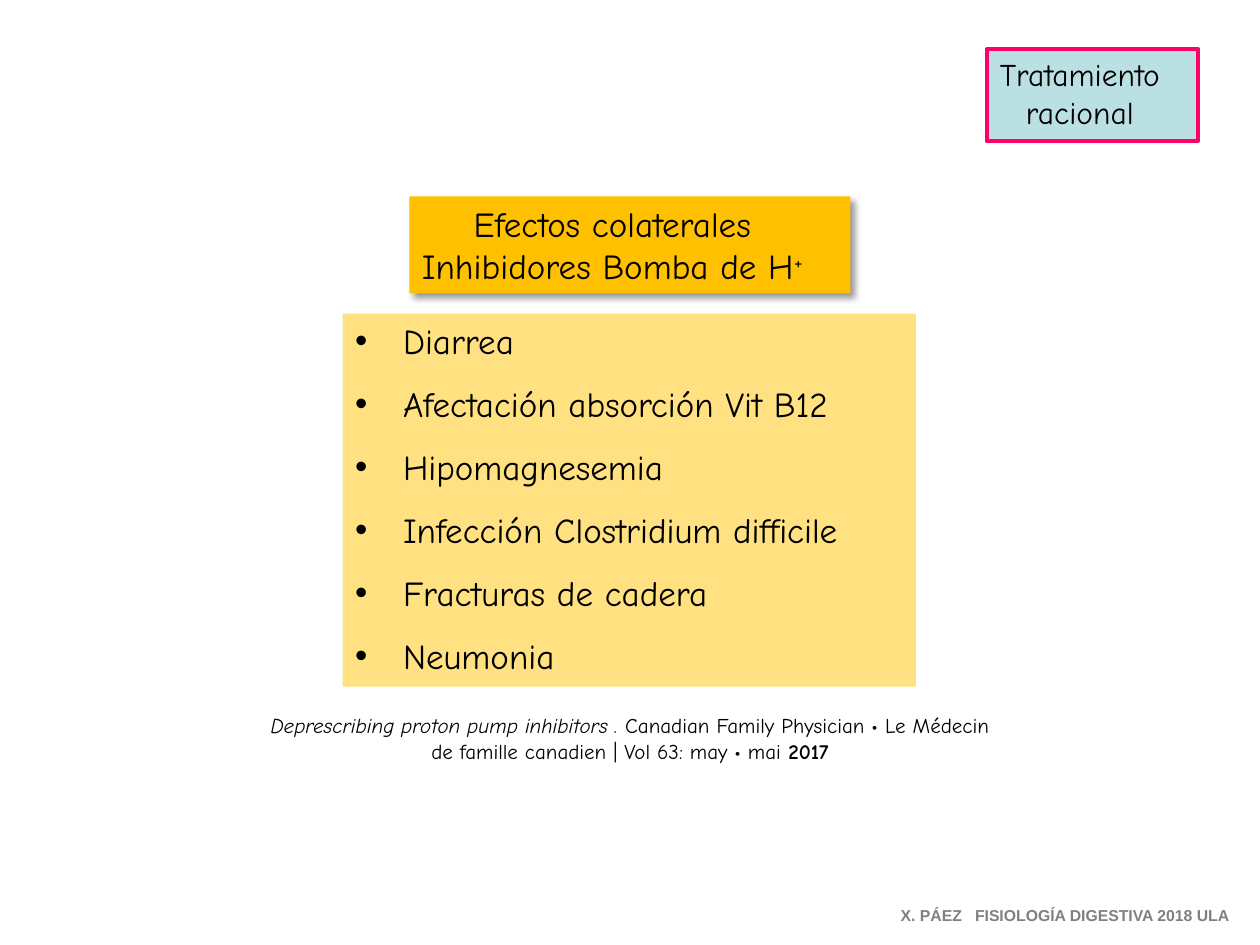
"""Build the slide on side effects of proton pump inhibitors."""
from lxml.etree import SubElement
from pptx import Presentation
from pptx.dml.color import RGBColor
from pptx.enum.shapes import MSO_SHAPE
from pptx.enum.text import MSO_ANCHOR, PP_ALIGN
from pptx.oxml.ns import qn
from pptx.util import Inches, Pt

BLACK = RGBColor(0x00, 0x00, 0x00)
GRAY = RGBColor(0x80, 0x80, 0x80)
AMBER = RGBColor(0xFF, 0xC0, 0x00)
PALE_AMBER = RGBColor(0xFF, 0xE1, 0x81)
PALE_TEAL = RGBColor(0xBB, 0xE0, 0xE3)
PINK = RGBColor(0xFF, 0x00, 0x66)


def add_panel(left, top, width, height, fill):
    panel = slide.shapes.add_shape(
        MSO_SHAPE.RECTANGLE, Inches(left), Inches(top), Inches(width), Inches(height))
    panel.shadow.inherit = False
    panel.fill.solid()
    panel.fill.fore_color.rgb = fill
    panel.line.fill.background()
    panel.text_frame.word_wrap = True
    panel.text_frame.vertical_anchor = MSO_ANCHOR.TOP
    return panel


def add_run(paragraph, text, size, font="Comic Neue", color=BLACK, bold=False, italic=False):
    run = paragraph.add_run()
    run.text = text
    run.font.size = Pt(size)
    run.font.name = font
    run.font.color.rgb = color
    run.font.bold = bold
    run.font.italic = italic
    return run


prs = Presentation()
prs.slide_width = Inches(10)
prs.slide_height = Inches(7.5)
slide = prs.slides.add_slide(prs.slide_layouts[6])

citation = slide.shapes.add_textbox(Inches(2.02), Inches(5.61), Inches(5.96), Inches(0.5))
citation.text_frame.word_wrap = True
reference = citation.text_frame.paragraphs[0]
reference.alignment = PP_ALIGN.CENTER
add_run(reference, "Deprescribing proton pump inhibitors . ", 12, italic=True)
add_run(reference, "Canadian Family Physician • Le Médecin de famille canadien "
                   "| Vol 63: may • mai ", 12)
add_run(reference, "2017", 12, bold=True)

heading = add_panel(3.25, 1.56, 3.5, 0.77, AMBER)
effects = heading._element.spPr.find(qn("a:effectLst"))
shadow = SubElement(effects, qn("a:outerShdw"), blurRad=str(Pt(4)), dist=str(Pt(3)),
                    dir="2700000", algn="tl", rotWithShape="0")
shadow_color = SubElement(shadow, qn("a:srgbClr"), val=str(BLACK))
SubElement(shadow_color, qn("a:alpha"), val="40000")

side_effects = add_panel(2.72, 2.49, 4.55, 2.96, PALE_AMBER)
items = ["Diarrea", "Afectación absorción Vit B12", "Hipomagnesemia",
         "Infección Clostridium difficile", "Fracturas de cadera", "Neumonia"]
for index, item in enumerate(items):
    frame = side_effects.text_frame
    entry = frame.add_paragraph() if index else frame.paragraphs[0]
    entry.alignment = PP_ALIGN.LEFT
    properties = entry._p.get_or_add_pPr()
    properties.set("marL", str(Inches(0.38)))
    properties.set("indent", str(-Inches(0.38)))
    SubElement(properties, qn("a:buFont"), typeface="Arial")
    SubElement(properties, qn("a:buChar"), char="•")
    if index:
        entry.space_before = Pt(12)
    add_run(entry, item, 20)

topic = add_panel(7.83, 0.39, 1.68, 0.73, PALE_TEAL)
topic.line.color.rgb = PINK
topic.line.width = Pt(2.25)

for panel, lines, size, right_inset in [
    (heading, ["Efectos colaterales", "Inhibidores Bomba de H"], 20, 0.28),
    (topic, ["Tratamiento", "racional"], 18, 0.2),
]:
    frame = panel.text_frame
    frame.margin_left = 0
    frame.margin_right = Inches(right_inset)
    for index, line in enumerate(lines):
        paragraph = frame.add_paragraph() if index else frame.paragraphs[0]
        paragraph.alignment = PP_ALIGN.CENTER
        add_run(paragraph, line, size)

charge = add_run(heading.text_frame.paragraphs[1], "+", 20)
charge._r.get_or_add_rPr().set("baseline", "30000")

footer = slide.shapes.add_textbox(Inches(7.05), Inches(7.14), Inches(2.86), Inches(0.25))
footer.text_frame.word_wrap = True
footer.text_frame.margin_right = 0
credit = footer.text_frame.paragraphs[0]
tabs = SubElement(credit._p.get_or_add_pPr(), qn("a:tabLst"))
SubElement(tabs, qn("a:tab"), pos=str(Inches(0.59)), algn="l")
add_run(credit, "X. PÁEZ\tFISIOLOGÍA DIGESTIVA 2018 ULA", 9, "Arial", GRAY, bold=True)

prs.save("out.pptx")
